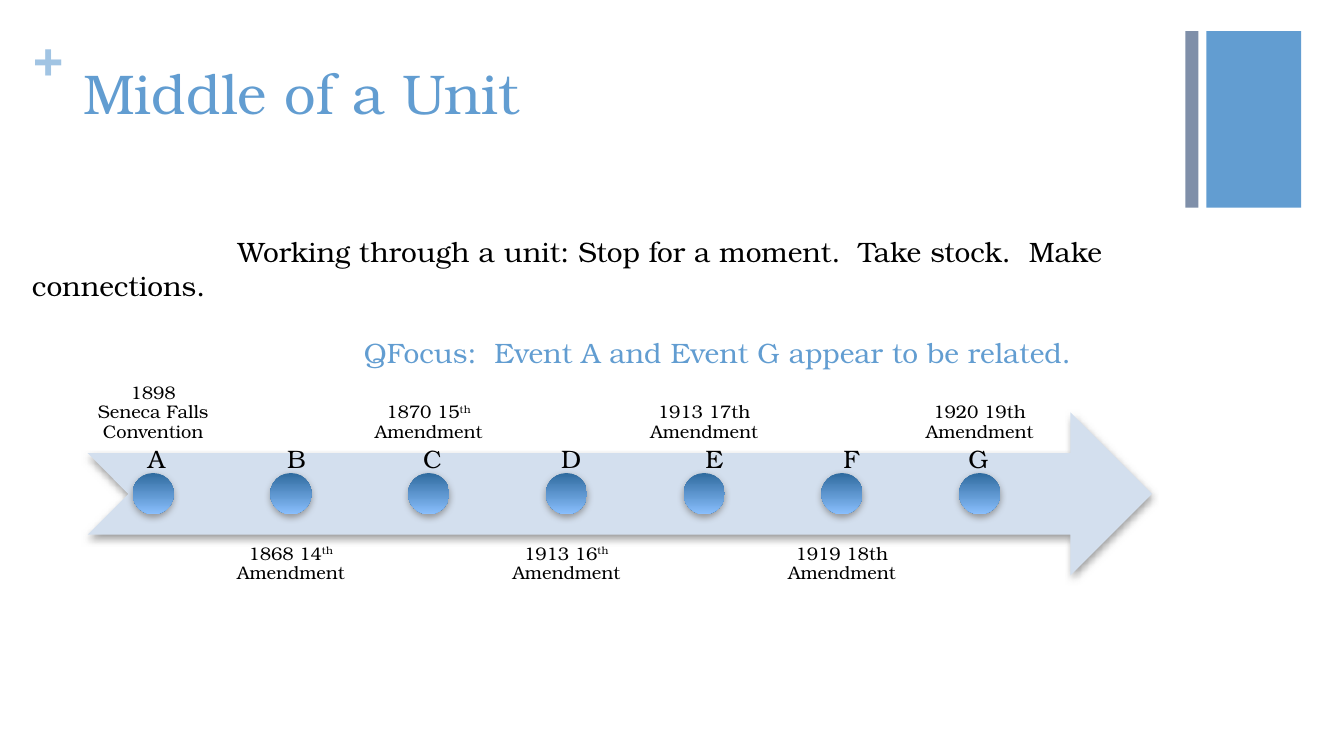
"""Build the "Middle of a Unit" timeline slide."""
import lxml.etree
import pptx
import pptx.dml.color
import pptx.enum.shapes
import pptx.enum.text
import pptx.oxml
import pptx.oxml.ns
import pptx.util

Pt = pptx.util.Pt
RGBColor = pptx.dml.color.RGBColor
MSO_SHAPE = pptx.enum.shapes.MSO_SHAPE
MSO_ANCHOR = pptx.enum.text.MSO_ANCHOR

FONT = "TeX Gyre Bonum"
BLUE = RGBColor(0x62, 0x9D, 0xD1)
LIGHT_BLUE = RGBColor(0xA1, 0xC4, 0xE3)
SLATE = RGBColor(0x7F, 0x8F, 0xA9)
PALE_BLUE = RGBColor(0xD3, 0xDF, 0xEE)
DOT_TOP = RGBColor(0x2F, 0x6B, 0x9F)
DOT_BOTTOM = RGBColor(0x8A, 0xBF, 0xFD)
BLACK = RGBColor(0, 0, 0)

SHADOW = (
    f'<a:effectLst {pptx.oxml.ns.nsdecls("a")}>'
    '<a:outerShdw blurRad="63500" dist="25400" dir="5400000" rotWithShape="0">'
    '<a:srgbClr val="808080"><a:alpha val="75000"/></a:srgbClr>'
    '</a:outerShdw></a:effectLst>'
)


def add_text(shapes, box, paragraphs, size, color, inset=(7.2, 3.6)):
    """Add a wrapping text box; each paragraph is a list of run texts."""
    textbox = shapes.add_textbox(*(Pt(length) for length in box))
    frame = textbox.text_frame
    frame.word_wrap = True
    frame.margin_left = frame.margin_right = Pt(inset[0])
    frame.margin_top = frame.margin_bottom = Pt(inset[1])
    for index, parts in enumerate(paragraphs):
        paragraph = frame.add_paragraph() if index else frame.paragraphs[0]
        for part in parts:
            run = paragraph.add_run()
            run.text = part
            run.font.name = FONT
            run.font.size = Pt(size)
            run.font.color.rgb = color
    return frame


def add_shape(shapes, kind, box, color, shadow=False):
    """Add a borderless filled shape, with or without a soft shadow."""
    shape = shapes.add_shape(kind, *(Pt(length) for length in box))
    shape.line.fill.background()
    shape.fill.solid()
    shape.fill.fore_color.rgb = color
    shape.shadow.inherit = False
    if shadow:
        effects = shape._element.spPr.find(pptx.oxml.ns.qn("a:effectLst"))
        effects.getparent().replace(effects, pptx.oxml.parse_xml(SHADOW))
    return shape


presentation = pptx.Presentation()
presentation.slide_width = Pt(960)
presentation.slide_height = Pt(540)
slide = presentation.slides.add_slide(presentation.slide_layouts[6])

add_shape(slide.shapes, MSO_SHAPE.RECTANGLE, (861.8, 22.3, 67.7, 126), BLUE)
add_shape(slide.shapes, MSO_SHAPE.RECTANGLE, (846.7, 22.3, 9.4, 126), SLATE)
plus = add_text(slide.shapes, (23.8, 18, 27.4, 43.9), [["+"]], 36, LIGHT_BLUE, (0, 0))
plus.paragraphs[0].runs[0].font.bold = True
add_text(slide.shapes, (52.6, 38.2, 793.4, 87.8), [["Middle of a Unit"]], 40, BLUE)

intro = add_text(
    slide.shapes,
    (15.8, 164.2, 853.9, 79.9),
    [
        ["Working through a unit: Stop for a moment.  Take stock.  Make connections."],
        ["QFocus:  Event A and Event G appear to be related."],
    ],
    20,
    BLACK,
)
for paragraph, indent in zip(intro.paragraphs, (147, 237)):
    paragraph._p.get_or_add_pPr().set("indent", str(Pt(indent)))
intro.paragraphs[1].space_before = Pt(24)
intro.paragraphs[1].runs[0].font.color.rgb = BLUE

EVENTS = [
    ("A", 98.6, 26.6, ["1898 Seneca Falls Convention"]),
    ("B", 198, 34.6, ["1868 14", "th", " Amendment"]),
    ("C", 295.2, 36, ["1870 15", "th", " Amendment"]),
    ("D", 393.8, 31, ["1913 16", "th", " Amendment"]),
    ("E", 496.8, 25.9, ["1913 17th Amendment"]),
    ("F", 595.4, 25.2, ["1919 18th Amendment"]),
    ("G", 684.7, 24.5, ["1920 19th Amendment"]),
]
TIMELINE_LEFT = 62.6
EVENT_PITCH = 98.4
LABEL_WIDTH = 93.6
BAND_HEIGHT = 116.6
DOT_SIZE = 29.5

timeline = slide.shapes.add_group_shape().shapes
add_shape(timeline, MSO_SHAPE.NOTCHED_RIGHT_ARROW,
          (TIMELINE_LEFT, 294.5, 760.3, BAND_HEIGHT), PALE_BLUE, shadow=True)

for index, (letter, letter_left, letter_width, label_parts) in enumerate(EVENTS):
    above = index % 2 == 0
    left = TIMELINE_LEFT + index * EVENT_PITCH
    label = add_text(timeline, (left, 206.6 if above else 381.6, LABEL_WIDTH, BAND_HEIGHT),
                     [label_parts], 13, BLACK, (7.2, 7.2))
    label.vertical_anchor = MSO_ANCHOR.BOTTOM if above else MSO_ANCHOR.TOP
    paragraph = label.paragraphs[0]
    paragraph.alignment = pptx.enum.text.PP_ALIGN.CENTER
    paragraph.line_spacing = 0.9
    for run in paragraph.runs[1:2]:
        run._r.get_or_add_rPr().set("baseline", "30000")

    dot_left = left + (LABEL_WIDTH - DOT_SIZE) / 2
    dot = add_shape(timeline, MSO_SHAPE.OVAL,
                    (dot_left, 337.9, DOT_SIZE, DOT_SIZE), DOT_TOP, shadow=True)
    dot.fill.gradient()
    dot.fill.gradient_angle = 270
    for stop, color in zip(dot.fill.gradient_stops, (DOT_TOP, DOT_BOTTOM)):
        stop.color.rgb = color

    add_text(slide.shapes, (letter_left, 313.2, letter_width, 28.8), [[letter]], 18, BLACK)

presentation.save("out.pptx")
